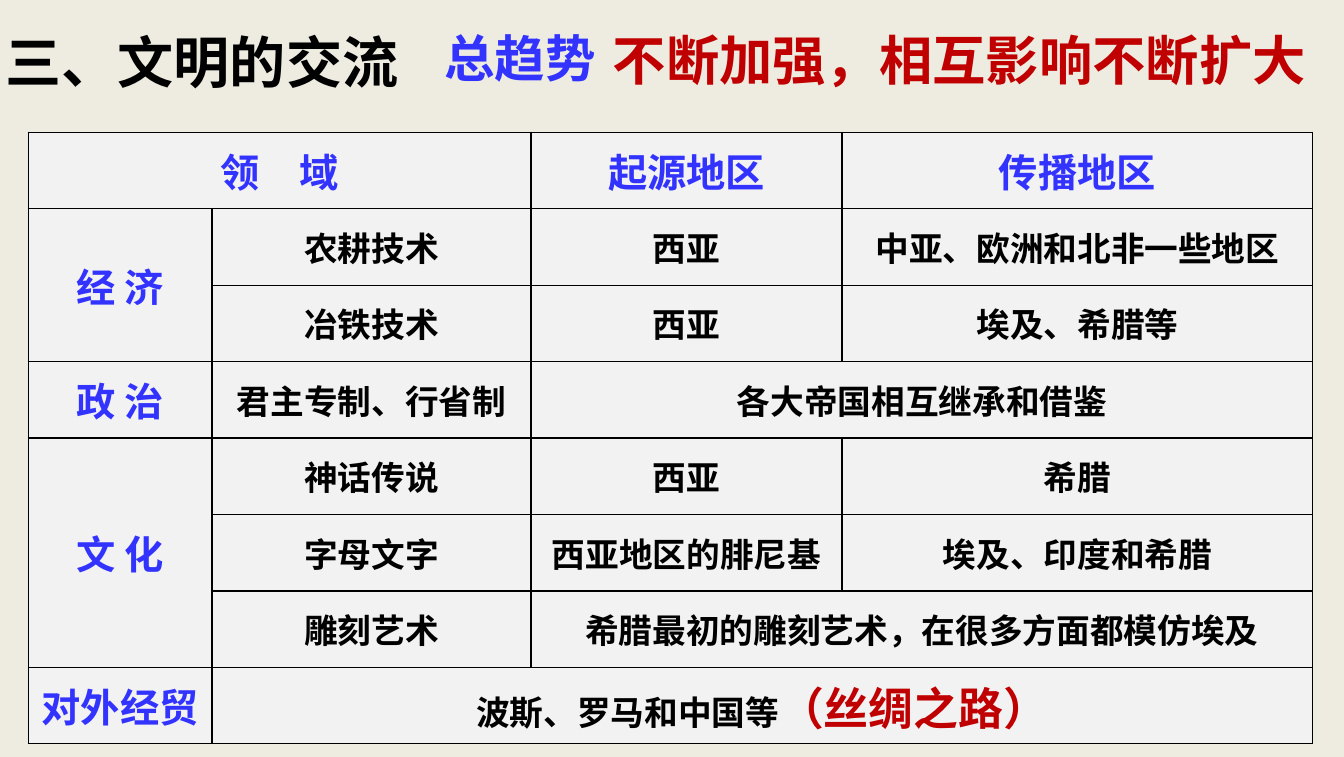
from lxml.etree import SubElement
from pptx import Presentation
from pptx.dml.color import RGBColor
from pptx.enum.text import MSO_ANCHOR as Anchor, MSO_AUTO_SIZE as AutoSize, PP_ALIGN as Align
from pptx.oxml.ns import qn
from pptx.util import Inches, Pt

WIDTH, HEIGHT = 13.31, 7.5
FONT = "Noto Sans CJK SC"
PAPER, CELL, BLACK, BLUE, RED = "EEECE1", "F2F2F2", "000000", "3333FF", "C00000"

HEADINGS = [  # left, width, height, text, size, colour, alignment
    (-0.04, 4.13, 0.77, "三、文明的交流", 40, BLACK, Align.LEFT),
    (4.29, 1.72, 0.71, "总趋势", 36, BLUE, Align.CENTER),
    (5.97, 7.13, 0.74, "不断加强，相互影响不断扩大", 38, RED, Align.LEFT),
]
COLUMN_SHARES = [1.82, 3.16, 3.08, 4.66]
EXCHANGES = [  # None continues the cell to the left or above
    ["领　域", None, "起源地区", "传播地区"],
    ["经 济", "农耕技术", "西亚", "中亚、欧洲和北非一些地区"],
    [None, "冶铁技术", "西亚", "埃及、希腊等"],
    ["政 治", "君主专制、行省制", "各大帝国相互继承和借鉴", None],
    ["文 化", "神话传说", "西亚", "希腊"],
    [None, "字母文字", "西亚地区的腓尼基", "埃及、印度和希腊"],
    [None, "雕刻艺术", "希腊最初的雕刻艺术，在很多方面都模仿埃及", None],
    ["对外经贸", "波斯、罗马和中国等", None, None],
]
MERGES = [  # first row, first column, last row, last column
    (0, 0, 0, 1), (1, 0, 2, 0), (3, 2, 3, 3),
    (4, 0, 6, 0), (6, 2, 6, 3), (7, 1, 7, 3),
]


def paint(fill, colour):
    fill.solid()
    fill.fore_color.rgb = RGBColor.from_string(colour)


def add_text(frame, text, size=24, colour=BLACK, align=Align.CENTER):
    """Append a bold run to the frame's first paragraph."""
    paragraph = frame.paragraphs[0]
    paragraph.alignment = align
    run = paragraph.add_run()
    run.text = text
    font = run.font
    font.size, font.bold = Pt(size), True
    paint(font.fill, colour)
    font.name = FONT
    SubElement(font._element, qn("a:ea"), typeface=FONT)


def add_border(cell, colour=BLACK, width=1):
    properties = cell._tc.get_or_add_tcPr()
    for side in ("lnL", "lnR", "lnT", "lnB"):
        line = SubElement(properties, qn(f"a:{side}"), w=str(Pt(width)))
        solid = SubElement(line, qn("a:solidFill"))
        SubElement(solid, qn("a:srgbClr"), val=colour)


def add_headings(slide, top):
    for left, width, height, text, size, colour, align in HEADINGS:
        box = slide.shapes.add_textbox(*map(Inches, (left, top, width, height)))
        frame = box.text_frame
        frame.word_wrap = False
        frame.auto_size = AutoSize.SHAPE_TO_FIT_TEXT
        add_text(frame, text, size=size, colour=colour, align=align)


def add_exchange_table(slide, left, top, width, height):
    table = slide.shapes.add_table(
        len(EXCHANGES), len(COLUMN_SHARES), *map(Inches, (left, top, width, height))
    ).table
    table.first_row = table.horz_banding = False
    for column, share in zip(table.columns, COLUMN_SHARES):
        column.width = Inches(width * share / sum(COLUMN_SHARES))

    for r, labels in enumerate(EXCHANGES):
        for c, label in enumerate(labels):
            cell = table.cell(r, c)
            add_border(cell)
            paint(cell.fill, CELL)
            cell.vertical_anchor = Anchor.MIDDLE
            if label:
                is_header = r == 0 or c == 0
                add_text(cell.text_frame, label, size=28 if is_header else 24,
                         colour=BLUE if is_header else BLACK)

    add_text(table.cell(7, 1).text_frame, "（丝绸之路）", size=32, colour=RED)
    for first_row, first_column, last_row, last_column in MERGES:
        table.cell(first_row, first_column).merge(table.cell(last_row, last_column))


def main():
    deck = Presentation()
    deck.slide_width, deck.slide_height = Inches(WIDTH), Inches(HEIGHT)
    slide = deck.slides.add_slide(deck.slide_layouts[6])
    paint(slide.background.fill, PAPER)
    add_headings(slide, top=0.22)
    add_exchange_table(slide, 0.28, 1.31, 12.72, 6.06)
    deck.save("out.pptx")


if __name__ == "__main__":
    main()
